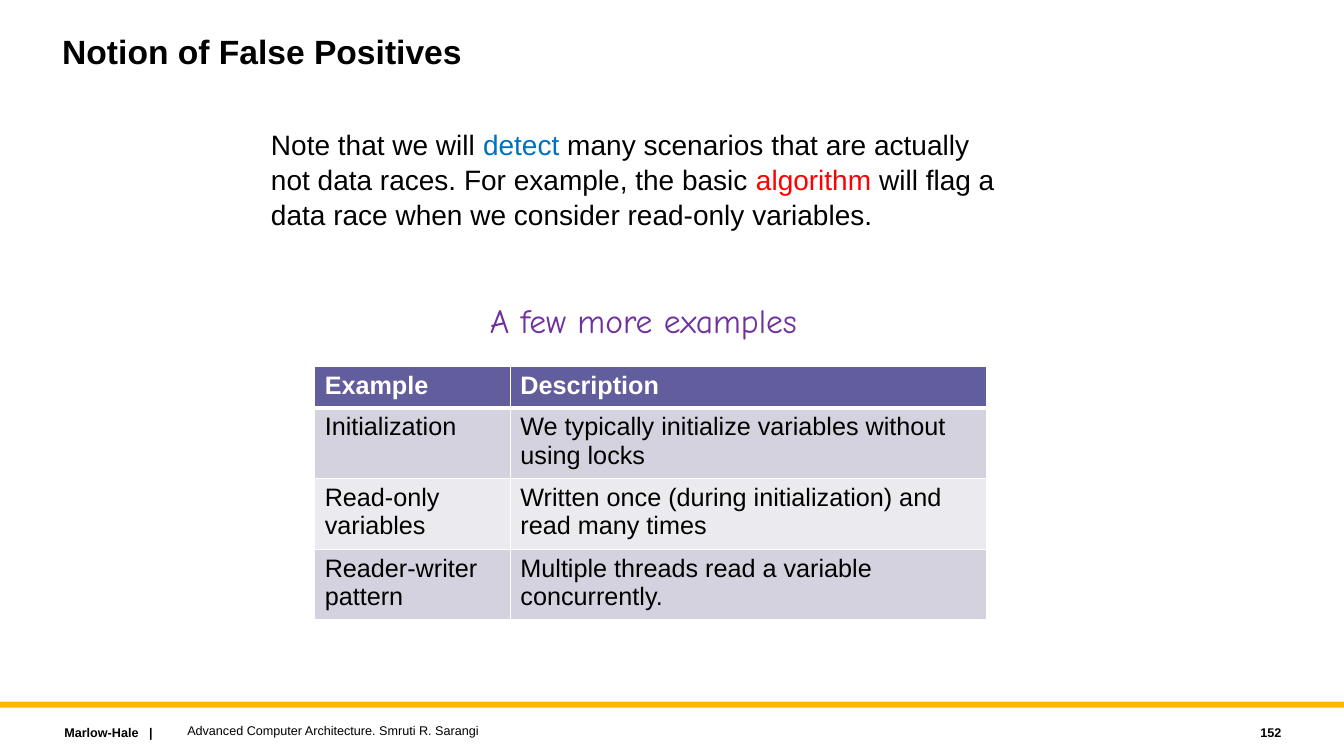
from dataclasses import dataclass

from lxml.etree import SubElement
from pptx import Presentation
from pptx.dml.color import RGBColor as RGB
from pptx.enum.shapes import MSO_SHAPE as SHAPE
from pptx.enum.text import MSO_ANCHOR as ANCHOR, PP_ALIGN as ALIGN
from pptx.oxml.ns import qn
from pptx.util import Pt


@dataclass(frozen=True)
class Theme:
    font: str = "Arial"
    hand_font: str = "Comic Neue"
    text: str = "000000"
    white: str = "FFFFFF"
    rule: str = "FFB600"
    blue: str = "0070C0"
    red: str = "FF0000"
    purple: str = "7030A0"
    header: str = "625D9C"
    bands: tuple = ("D3D2DE", "EAEAEF")
    heading_size: int = 24
    body_size: int = 20
    table_size: int = 18
    footer_size: int = 9


THEME = Theme()
SLIDE_W, SLIDE_H = 960, 540

BODY = [
    ("Note that we will ", THEME.text),
    ("detect", THEME.blue),
    (" many scenarios that are actually not data races. "
     "For example, the basic ", THEME.text),
    ("algorithm", THEME.red),
    (" will flag a data race when we consider read-only variables.",
     THEME.text),
]
EXAMPLES = [
    ("Example", "Description"),
    ("Initialization", "We typically initialize variables without using locks"),
    ("Read-only variables",
     "Written once (during initialization) and read many times"),
    ("Reader-writer pattern", "Multiple threads read a variable concurrently."),
]


def style(p, size, color=THEME.text, bold=False, name=THEME.font):
    p.font.name, p.font.size, p.font.bold = name, Pt(size), bold
    p.font.color.rgb = RGB.from_string(color)


def add_text(slide, box, text, size, wrap=True, anchor=ANCHOR.TOP, **look):
    """Place a one-paragraph text box and return the paragraph."""
    tf = slide.shapes.add_textbox(*map(Pt, box)).text_frame
    tf.word_wrap, tf.vertical_anchor = wrap, anchor
    p = tf.paragraphs[0]
    p.text = text
    style(p, size, **look)
    return p


def add_title(slide, box):
    p = add_text(slide, box, "Notion of False Positives",
                 THEME.heading_size, bold=True)
    p.line_spacing = 0.9


def add_body(slide, box):
    p = add_text(slide, box, "", THEME.body_size)
    p.line_spacing = 1.04
    for text, color in BODY:
        r = p.add_run()
        r.text = text
        r.font.color.rgb = RGB.from_string(color)


def set_borders(cell, row):
    """White cell borders, thicker between header and body."""
    tc_pr = cell.fill._xPr
    widths = {"L": 1, "R": 1, "T": 3 if row == 1 else 1,
              "B": 3 if row == 0 else 1}
    for i, (side, width) in enumerate(widths.items()):
        ln = SubElement(tc_pr, qn(f"a:ln{side}"), w=str(Pt(width)))
        fill = SubElement(ln, qn("a:solidFill"))
        SubElement(fill, qn("a:srgbClr"), val=THEME.white)
        tc_pr.insert(i, ln)


def add_examples(slide, box):
    """Caption above a table that fills the rest of the box."""
    x, y, w, h = box
    add_text(slide, (x + 118, y, 255.6, 36), "A few more examples",
             THEME.heading_size, wrap=False, color=THEME.purple,
             name=THEME.hand_font)

    caption_h, header_h, label_w = 51, 29.4, 139.8
    table_h = h - caption_h
    table = slide.shapes.add_table(
        len(EXAMPLES), 2, Pt(x), Pt(y + caption_h), Pt(w), Pt(table_h)).table
    for column, width in zip(table.columns, (label_w, w - label_w)):
        column.width = Pt(width)
    row_h = (table_h - header_h) / (len(EXAMPLES) - 1)
    for i, texts in enumerate(EXAMPLES):
        head = i == 0
        table.rows[i].height = Pt(header_h if head else row_h)
        for j, text in enumerate(texts):
            cell = table.cell(i, j)
            cell.fill.solid()
            cell.fill.fore_color.rgb = RGB.from_string(
                THEME.header if head else THEME.bands[(i - 1) % 2])
            set_borders(cell, i)
            cell.text = text
            style(cell.text_frame.paragraphs[0], THEME.table_size,
                  THEME.white if head else THEME.text, head)


def add_footer(slide, box):
    x, y, w, h = box
    # Rule across the slide
    sp = slide.shapes.add_shape(SHAPE.RECTANGLE, Pt(x), Pt(y), Pt(w), Pt(4.3))
    sp.shadow.inherit = False
    sp.fill.solid()
    sp.fill.fore_color.rgb = RGB.from_string(THEME.rule)
    sp.line.fill.background()

    # Publisher, book and page number
    size, line_h = THEME.footer_size, 18
    p = add_text(slide, (x + 38.9, y + 13, 163.4, line_h),
                 "Marlow-Hale\u00a0\u00a0 |".replace("\u00a0", " "), size, bold=True)
    add_text(slide, (x + 126.7, y + 11.5, 576, line_h),
             "Advanced Computer Architecture. Smruti R. Sarangi", size,
             anchor=ANCHOR.MIDDLE)
    p = add_text(slide, (x + w - 138.5, y + 13, 100.8, line_h), "152", size,
                 anchor=ANCHOR.MIDDLE, bold=True)
    p.alignment = ALIGN.RIGHT


def main():
    prs = Presentation()
    prs.slide_width, prs.slide_height = Pt(SLIDE_W), Pt(SLIDE_H)
    slide = prs.slides.add_slide(prs.slide_layouts[6])
    add_title(slide, (37.4, 21.6, 720, 64.8))
    add_body(slide, (186.5, 86.4, 540, 87))
    add_examples(slide, (224.8, 211, 480, 231.8))
    add_footer(slide, (0, 501.1, SLIDE_W, SLIDE_H - 501.1))
    prs.save("out.pptx")


if __name__ == "__main__":
    main()
